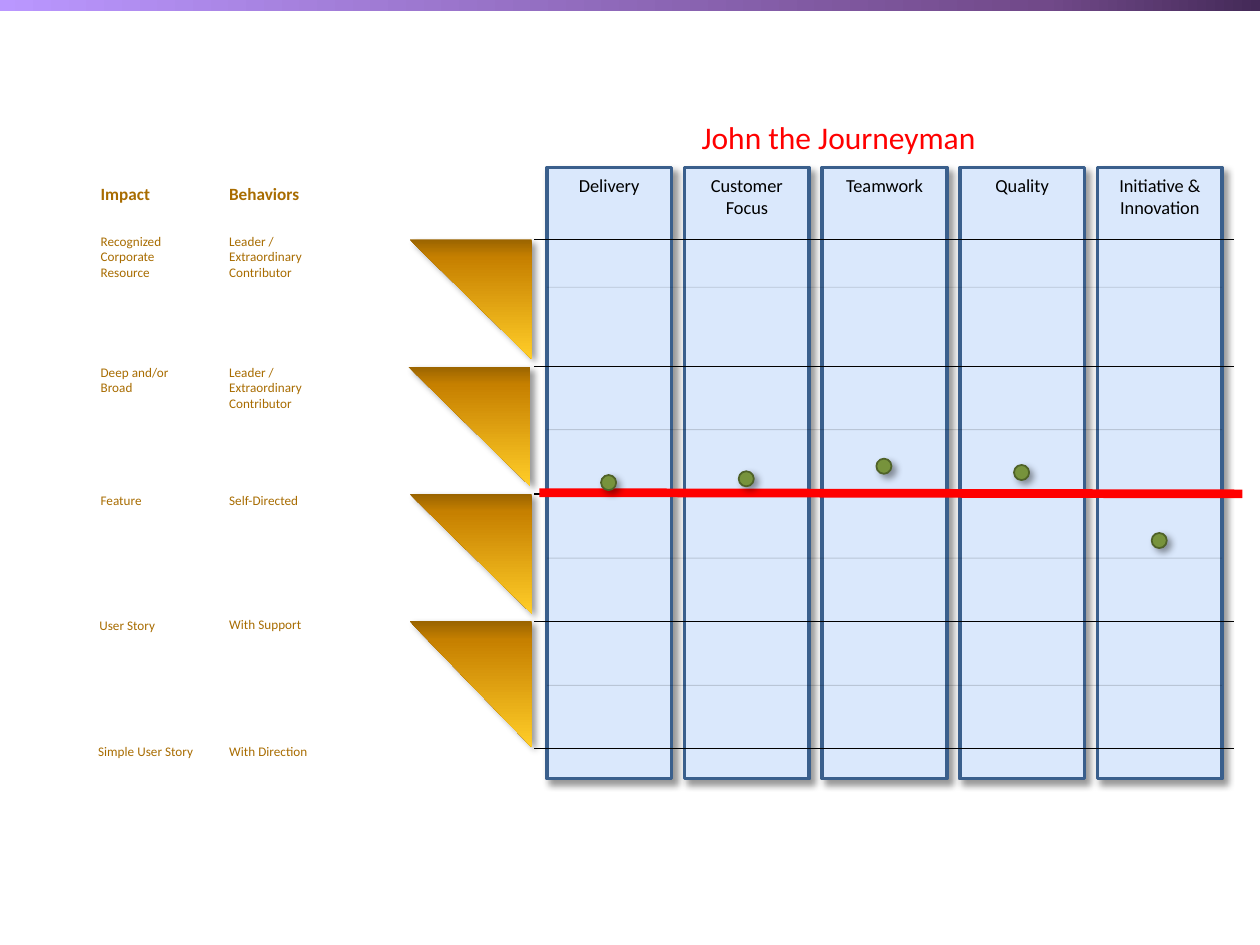
from pptx import Presentation
from pptx.dml.color import RGBColor
from pptx.enum.shapes import MSO_CONNECTOR as Connector, MSO_SHAPE as Shape
from pptx.enum.text import MSO_ANCHOR as Anchor, MSO_AUTO_SIZE as AutoSize, PP_ALIGN as Align
from pptx.oxml.ns import qn
from pptx.util import Inches, Pt
from lxml.etree import SubElement

GOLD = [(0, "9A6400"), (15, "C68000"), (100, "FFCD28")]
PURPLE = [(0, "442A58"), (17, "714989"), (100, "BA97FF")]
LABEL = {"size": Pt(7.5), "color": "A86C00"}
HEADING = {"size": Pt(9.8), "color": "A86C00", "bold": True}
COLUMN = {"size": Pt(10.5), "color": "000000"}
TITLE = {"size": Pt(18), "color": "FF0000"}

COLUMN_LEFT, COLUMN_WIDTH = 4.34, 0.99
COLUMN_STEP = (8.71 - COLUMN_LEFT) / 4
LEVEL_TOP, LEVEL_STEP = 1.9, 1.01


def colour(value):
    return RGBColor.from_string(value)


def add_alpha(parent, percent):
    SubElement(parent, qn("a:alpha"), val=str(percent * 1000))


class SlideBuilder:
    def __init__(self, page, font_name="Calibri"):
        self.page = page
        self.font_name = font_name

    def add_lines(self, frame, lines, style, align):
        for index, line in enumerate(lines):
            para = frame.paragraphs[0] if index == 0 else frame.add_paragraph()
            para.alignment = align
            span = para.add_run()
            span.text = line
            for name, value in {"name": self.font_name, **style}.items():
                if name == "color":
                    span.font.color.rgb = colour(value)
                else:
                    setattr(span.font, name, value)

    def text(self, left, top, width, height, lines, style, wrap=False):
        box = self.page.shapes.add_textbox(*map(Inches, (left, top, width, height)))
        frame = box.text_frame
        frame.word_wrap = wrap
        frame.auto_size = AutoSize.SHAPE_TO_FIT_TEXT
        self.add_lines(frame, lines, style, Align.LEFT)

    def shape(self, kind, left, top, width, height, fill=None, line=None, shadow=True):
        shape = self.page.shapes.add_shape(kind, *map(Inches, (left, top, width, height)))
        shape.shadow.inherit = False
        if fill:
            shape.fill.solid()
            shape.fill.fore_color.rgb = colour(fill)
        if line:
            shape.line.color.rgb = colour(line[0])
            shape.line.width = Pt(line[1])
        else:
            shape.line.fill.background()
        if shadow:
            self.shadow(shape)
        return shape

    def shadow(self, shape):
        effects = shape._element.spPr.find(qn("a:effectLst"))
        outer = SubElement(effects, qn("a:outerShdw"), blurRad=str(Pt(4)),
                           dist=str(Pt(3)), dir=str(45 * 60000), rotWithShape="0")
        add_alpha(SubElement(outer, qn("a:srgbClr"), val="000000"), 40)

    def gradient(self, shape, stops, angle):
        shape.fill.gradient()
        shape.fill.gradient_angle = angle
        stop_list = shape._element.spPr.find(".//" + qn("a:gsLst"))
        for stop in list(stop_list):
            stop_list.remove(stop)
        for position, value in stops:
            stop = SubElement(stop_list, qn("a:gs"), pos=str(position * 1000))
            SubElement(stop, qn("a:srgbClr"), val=value)

    def column(self, left, name):
        box = self.shape(Shape.RECTANGLE, left, 1.33, COLUMN_WIDTH, 4.85,
                         "DAE8FC", ("3A5F8C", 2))
        box.text_frame.word_wrap = True
        box.text_frame.vertical_anchor = Anchor.TOP
        self.add_lines(box.text_frame, [name], COLUMN, Align.CENTER)

    def triangle(self, left, top, height):
        shape = self.shape(Shape.RIGHT_TRIANGLE, left, top, 0.97, height)
        shape.rotation = 180
        self.gradient(shape, GOLD, 90)

    def dot(self, left, top):
        self.shape(Shape.OVAL, left, top, 0.12, 0.12, "77933C", ("4F6228", 1))

    def line(self, start, end, value, width, alpha=None):
        line = self.page.shapes.add_connector(
            Connector.STRAIGHT, *map(Inches, (*start, *end)))
        line.line.color.rgb = colour(value)
        line.line.width = Pt(width)
        properties = line._element.spPr
        if alpha:
            add_alpha(properties.find(".//" + qn("a:srgbClr")), alpha)
        SubElement(properties, qn("a:effectLst"))


def main():
    deck = Presentation()
    deck.slide_width, deck.slide_height = Inches(10), Inches(7.5)
    builder = SlideBuilder(deck.slides.add_slide(deck.slide_layouts[6]))

    banner = builder.shape(Shape.RECTANGLE, -0.02, -0.02, 10.02, 0.11, shadow=False)
    builder.gradient(banner, PURPLE, 180)

    scores = {"Delivery": 3.77, "Customer Focus": 3.74, "Teamwork": 3.64,
              "Quality": 3.69, "Initiative & Innovation": 4.23}
    lefts = [COLUMN_LEFT + COLUMN_STEP * index for index in range(len(scores))]
    for left, name in zip(lefts, scores):
        builder.column(left, name)

    levels = [LEVEL_TOP + LEVEL_STEP * index for index in range(5)]
    for top in levels:
        builder.line((4.24, top), (9.79, top), "000000", 0.75)
    for top in (2.28, 3.41, 4.43, 5.44):
        builder.line((COLUMN_LEFT, top), (9.7, top), "000000", 0.5, alpha=15)
    for top, left, height in zip(levels, (3.25, 3.24, 3.25, 3.25), (0.95, 0.95, 0.95, 1)):
        builder.triangle(left, top, height)

    behaviors = [
        (1.8, 0.85, ["Leader /", "Extraordinary", "Contributor"]),
        (2.84, 0.85, ["Leader /", "Extraordinary", "Contributor"]),
        (3.86, 0.81, ["Self-Directed"]),
        (4.84, 0.81, ["With Support"]),
        (5.85, 0.85, ["With Direction"]),
    ]
    impacts = [
        (1.8, 0.78, ["Recognized", "Corporate", "Resource"]),
        (2.84, 0.81, ["Deep and/or", "Broad"]),
        (3.86, 0.56, ["Feature"]),
        (4.85, 0.7, ["User Story"]),
        (5.85, 1.05, ["Simple User Story"]),
    ]
    for heading, width, labels, label_lefts in (
            ("Behaviors", 0.86, behaviors, [1.72] * 5),
            ("Impact", 0.64, impacts, [0.7, 0.7, 0.7, 0.69, 0.68])):
        builder.text(label_lefts[0], 1.41, width, 0.27, [heading], HEADING)
        for left, (top, label_width, lines) in zip(label_lefts, labels):
            height = 0.1 + 0.13 * len(lines)
            builder.text(left, top, label_width, height, lines, LABEL)

    builder.text(5.47, 0.89, 3.85, 0.4, ["John the Journeyman"], TITLE, wrap=True)

    builder.line((9.86, 3.92), (4.28, 3.91), "FF0000", 5)
    for left, top in zip(lefts, scores.values()):
        builder.dot(left + 0.43, top)

    deck.save("out.pptx")


if __name__ == "__main__":
    main()
